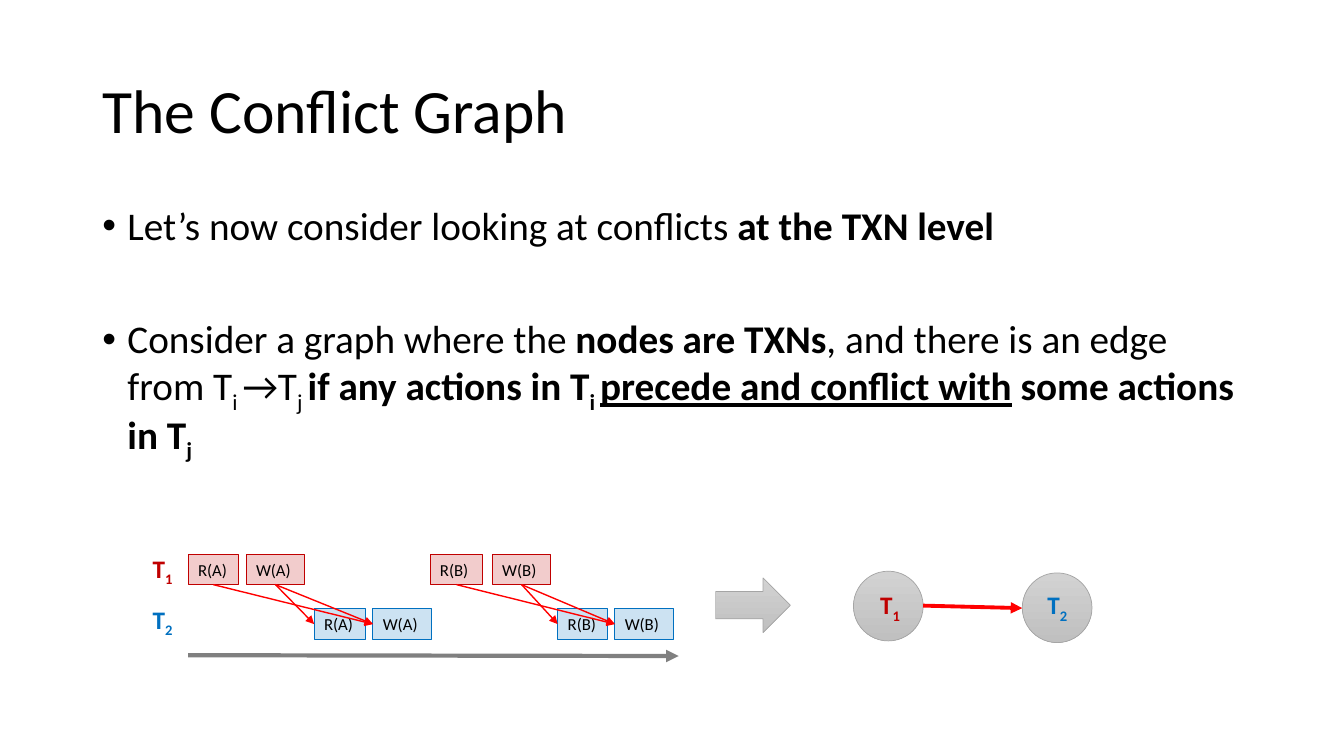
from lxml import etree
from pptx import Presentation
from pptx.dml.color import RGBColor
from pptx.enum.shapes import MSO_CONNECTOR, MSO_SHAPE
from pptx.enum.text import MSO_ANCHOR, MSO_AUTO_SIZE, PP_ALIGN
from pptx.oxml.ns import qn
from pptx.util import Inches, Pt

RECT, OVAL, BLOCK_ARROW = MSO_SHAPE.RECTANGLE, MSO_SHAPE.OVAL, MSO_SHAPE.RIGHT_ARROW
STRAIGHT = MSO_CONNECTOR.STRAIGHT
TOP, MIDDLE = MSO_ANCHOR.TOP, MSO_ANCHOR.MIDDLE
NO_FIT, GROW = MSO_AUTO_SIZE.NONE, MSO_AUTO_SIZE.SHAPE_TO_FIT_TEXT
LEFT = PP_ALIGN.LEFT
BOTTOM_SIDE, LEFT_SIDE = 2, 1

rgb = RGBColor.from_string
BLACK, RED, BLUE, ARROW_RED = "000000", "C00000", "0070C0", "FF0000"

# Grid of 160 columns by 90 rows, twelve cells to the inch
CELL = Inches(1) // 12
prs = Presentation()
prs.slide_width, prs.slide_height = 160 * CELL, 90 * CELL
s = prs.slides.add_slide(prs.slide_layouts[5])


def add_run(p, text, size, color=BLACK, bold=False, sub=False, underline=False):
    r = p.add_run()
    r.text = text
    r.font.name, r.font.size = "Calibri", Pt(size)
    r.font.bold, r.font.underline = bold, underline
    r.font.color.rgb = rgb(color)
    if sub:
        r._r.get_or_add_rPr().set("baseline", "-25000")


def add_arrow(color, width, x1=0, y1=0, x2=0, y2=0):
    cx = s.shapes.add_connector(STRAIGHT, *(int(v * CELL) for v in (x1, y1, x2, y2)))
    cx.line.color.rgb = rgb(color)
    cx.line.width = Pt(width)
    etree.SubElement(cx.line._get_or_add_ln(), qn("a:tailEnd"), type="triangle")
    etree.SubElement(cx._element.spPr, qn("a:effectLst"))
    return cx


# Title
title = s.shapes.title
title.left, title.top = 11 * CELL, int(4.8 * CELL)
title.width, title.height = 138 * CELL, int(17.4 * CELL)
tf = title.text_frame
tf.vertical_anchor, tf.auto_size, tf.word_wrap = MIDDLE, NO_FIT, True
p = tf.paragraphs[0]
p.alignment, p.line_spacing = LEFT, 0.9
add_run(p, "The Conflict Graph", 44)

# Bullets: space before, then runs with their formatting
BOLD, SUB, UNDER = {"bold": True}, {"sub": True}, {"underline": True}
bullets = [
    (10, [("Let’s now consider looking at conflicts ", {}), ("at the TXN level", BOLD)]),
    (50.8, [
        ("Consider a graph where the ", {}), ("nodes are TXNs", BOLD),
        (", and there is an edge from T", {}), ("i ", SUB), ("→T", {}), ("j ", SUB),
        ("if any actions in T", BOLD), ("i ", BOLD | SUB),
        ("precede and conflict with", BOLD | UNDER),
        (" some actions in T", BOLD), ("j", BOLD | SUB),
    ]),
]
body = s.shapes.add_textbox(11 * CELL, 24 * CELL, 138 * CELL, int(35.3 * CELL))
tf = body.text_frame
tf.word_wrap = True
for i, (space, runs) in enumerate(bullets):
    p = tf.add_paragraph() if i else tf.paragraphs[0]
    p.line_spacing, p.space_before = 0.9, Pt(space)
    pPr = p._p.get_or_add_pPr()
    pPr.set("marL", str(Inches(0.25)))
    pPr.set("indent", str(-Inches(0.25)))
    etree.SubElement(pPr, qn("a:buFont"), typeface="Arial")
    etree.SubElement(pPr, qn("a:buChar"), char="•")
    for text, style in runs:
        add_run(p, text, 28, **style)

# Graph nodes and the block arrow leading to them
for kind, x, y, w, h in [(OVAL, 101.6, 68, 8.3, 8.3), (OVAL, 121.7, 68.2, 8.3, 8.3),
                         (BLOCK_ARROW, 85.2, 68.8, 8.9, 6.5)]:
    sp = s.shapes.add_shape(kind, *(int(v * CELL) for v in (x, y, w, h)))
    sp.shadow.inherit = False
    sp.fill.gradient()
    sp.fill.gradient_angle = 270
    for stop, color in zip(sp.fill.gradient_stops, ("D2D2D2", "C0C0C0")):
        stop.color.rgb = rgb(color)
    sp.line.color.rgb, sp.line.width = rgb("A5A5A5"), Pt(0.5)

# Transaction labels, beside the schedule and on the nodes
for number, color, x, y in [("1", RED, 17, 65.3), ("2", BLUE, 17, 71.3),
                            ("1", RED, 103.6, 69.6), ("2", BLUE, 123.5, 69.6)]:
    label = s.shapes.add_textbox(*(int(v * CELL) for v in (x, y, 4.9, 4.8)))
    tf = label.text_frame
    tf.word_wrap, tf.auto_size = False, GROW
    p = tf.paragraphs[0]
    add_run(p, "T", 18, color, bold=True)
    add_run(p, number, 18, color, bold=True, sub=True)

# Schedule: one row of actions per transaction
schedule = [
    ("T1", RED, 66, [("R(A)", 22.4, 6), ("W(A)", 29.3, 7),
                     ("R(B)", 51.2, 6.3), ("W(B)", 58.6, 7)]),
    ("T2", BLUE, 72.5, [("R(A)", 37.4, 6.1), ("W(A)", 44.4, 7),
                        ("R(B)", 66.4, 5.9), ("W(B)", 73.2, 7)]),
]
boxes = {}
for txn, color, y, actions in schedule:
    for action, x, w in actions:
        sp = s.shapes.add_shape(RECT, *(int(v * CELL) for v in (x, y, w, 3.6)))
        sp.shadow.inherit = False
        sp.fill.solid()
        sp.fill.fore_color.rgb = rgb(color)
        srgb = sp._element.spPr.find(qn("a:solidFill"))[0]
        etree.SubElement(srgb, qn("a:alpha"), val="20000")
        sp.line.color.rgb, sp.line.width = rgb(color), Pt(0.75)
        tf = sp.text_frame
        tf.word_wrap, tf.auto_size, tf.vertical_anchor = True, GROW, TOP
        p = tf.paragraphs[0]
        p.alignment = LEFT
        add_run(p, action, 12)
        boxes[txn, action] = sp

# Conflicts between the two transactions
for item in "AB":
    for first, second in ("WR", "RW", "WW"):
        cx = add_arrow(ARROW_RED, 1)
        cx.begin_connect(boxes["T1", f"{first}({item})"], BOTTOM_SIDE)
        cx.end_connect(boxes["T2", f"{second}({item})"], LEFT_SIDE)

# Time axis and the edge between the nodes
add_arrow("808080", 3, 22.4, 78, 80.8, 78.1)
add_arrow(ARROW_RED, 2.75, 109.9, 72.1, 121.7, 72.4)

prs.save("out.pptx")
